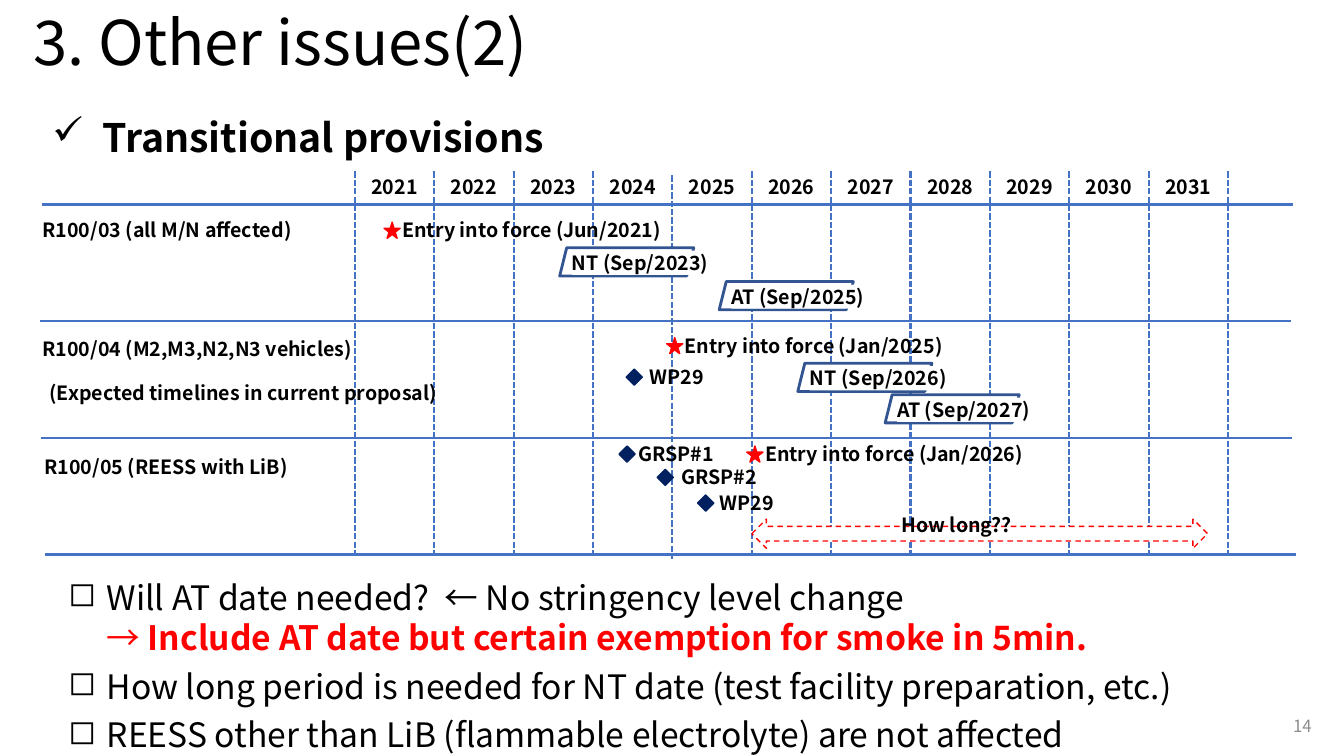
import lxml.etree
import pptx
import pptx.util
import pptx.dml.color
import pptx.enum.dml
import pptx.enum.shapes
import pptx.enum.text
import pptx.oxml.ns

Inches = pptx.util.Inches
Pt = pptx.util.Pt
RGBColor = pptx.dml.color.RGBColor
SHAPE = pptx.enum.shapes.MSO_SHAPE
DASH = pptx.enum.dml.MSO_LINE
ALIGN = pptx.enum.text.PP_ALIGN
ANCHOR = pptx.enum.text.MSO_ANCHOR
AUTO_SIZE = pptx.enum.text.MSO_AUTO_SIZE

FONT = "Noto Sans CJK JP"
COLORS = {
    "text": "000000",
    "grid": "4472C4",
    "tab": "325491",
    "force": "FF0000",
    "meeting": "002060",
    "white": "FFFFFF",
    "number": "8C8C8C",
}

# Timeline grid: one column a year, one row a regulation
FIRST_YEAR, LAST_YEAR = 2021, 2031
GRID_LEFT, GRID_TOP = 3.52, 2.03
HEADER_TOP, GRID_BOTTOM = 1.7, 5.51
COLUMN = (12.18 - GRID_LEFT) / (LAST_YEAR - FIRST_YEAR + 1)
ROW = (5.5 - GRID_TOP) / 3
LABEL_HEIGHT = 0.34
MARK = 0.16

presentation = pptx.Presentation()
presentation.slide_width = Inches(13.33)
presentation.slide_height = Inches(7.5)
slide = presentation.slides.add_slide(presentation.slide_layouts[5])


def write(shape, lines, size=14, bold=True, color="text", align=ALIGN.LEFT,
          side=0, edge=0.05, bullet=None, indent=0):
    """Fill a shape with paragraphs that share one format."""
    frame = shape.text_frame
    frame.text = "\n".join(lines)
    frame.word_wrap = True
    frame.auto_size = AUTO_SIZE.SHAPE_TO_FIT_TEXT
    frame.vertical_anchor = ANCHOR.TOP
    frame.margin_left = frame.margin_right = Inches(side)
    frame.margin_top = frame.margin_bottom = Inches(edge)
    for paragraph in frame.paragraphs:
        paragraph.alignment = align
        paragraph.space_after = Pt(6)
        for run in paragraph.runs:
            run.font.name = FONT
            run.font.size = Pt(size)
            run.font.bold = bold
            run.font.color.rgb = RGBColor.from_string(COLORS[color])
        if bullet:
            properties = paragraph._p.get_or_add_pPr()
            properties.set("marL", str(Inches(indent)))
            properties.set("indent", str(-Inches(indent)))
            mark = lxml.etree.SubElement(properties, pptx.oxml.ns.qn("a:buChar"))
            mark.set("char", bullet)


def add_mark(kind, left, top, width, height, fill, line=None, weight=1):
    shape = slide.shapes.add_shape(
        kind, Inches(left), Inches(top), Inches(width), Inches(height))
    shape.shadow.inherit = False
    shape.fill.solid()
    shape.fill.fore_color.rgb = RGBColor.from_string(COLORS[fill])
    if line:
        shape.line.color.rgb = RGBColor.from_string(COLORS[line])
        shape.line.width = Pt(weight)
    else:
        shape.line.fill.background()
    return shape


# Title and heading
title = slide.shapes.title
title.left, title.top = Inches(0.23), Inches(0)
title.width, title.height = Inches(12.88), Inches(0.91)
write(title, ["3. Other issues(2)"], size=44, bold=False, side=0.1)
title.text_frame.auto_size = AUTO_SIZE.NONE
title.text_frame.vertical_anchor = ANCHOR.MIDDLE
title.text_frame.paragraphs[0].line_spacing = 0.9
title.text_frame.paragraphs[0].space_after = Pt(0)

heading = slide.shapes.add_textbox(Inches(0.42), Inches(1.08), Inches(12.22), Inches(0.57))
write(heading, ["Transitional provisions"], size=28, side=0.1, bullet="✓", indent=0.5)

number = slide.shapes.add_textbox(Inches(10.11), Inches(7), Inches(3), Inches(0.4))
write(number, ["14"], size=12, bold=False, color="number", align=ALIGN.RIGHT, side=0.1)
number.text_frame.auto_size = AUTO_SIZE.NONE
number.text_frame.vertical_anchor = ANCHOR.MIDDLE
number.text_frame.paragraphs[0].space_after = Pt(0)

# Grid lines: x1, y1, x2, y2, weight, dash
grid_lines = []
for year in range(FIRST_YEAR, LAST_YEAR + 2):
    x = GRID_LEFT + (year - FIRST_YEAR) * COLUMN
    drop = 0.04 if year == 2025 else 0
    grid_lines.append((x, HEADER_TOP + drop, x, GRID_BOTTOM + drop, 1.5, DASH.SQUARE_DOT))
for row, (left, weight) in enumerate([(0.42, 2.25), (0.4, 1.5), (0.41, 1.5), (0.45, 2.25)]):
    y = GRID_TOP + row * ROW
    grid_lines.append((left, y, left + 12.4, y, weight, None))

for x1, y1, x2, y2, weight, dash in grid_lines:
    line = slide.shapes.add_connector(
        pptx.enum.shapes.MSO_CONNECTOR.STRAIGHT,
        Inches(x1), Inches(y1), Inches(x2), Inches(y2))
    line.line.color.rgb = RGBColor.from_string(COLORS["grid"])
    line.line.width = Pt(weight)
    if dash:
        line.line.dash_style = dash
    lxml.etree.SubElement(line._element.spPr, pptx.oxml.ns.qn("a:effectLst"))

# Labels: text, left, centre in rows, width, alignment
labels = [
    ("R100/03 (all M/N affected)", 0.42, 0.22, 3.1, ALIGN.LEFT),
    ("R100/04 (M2,M3,N2,N3 vehicles)", 0.42, 1.24, 3.57, ALIGN.LEFT),
    ("(Expected timelines in current proposal)", 0.49, 1.62, 4.42, ALIGN.LEFT),
    ("R100/05 (REESS with LiB)", 0.44, 2.25, 3.57, ALIGN.LEFT),
]
for year in range(FIRST_YEAR, LAST_YEAR + 1):
    x = GRID_LEFT + (year - FIRST_YEAR) * COLUMN
    labels.append((str(year), x, -0.15, COLUMN, ALIGN.CENTER))

# Tabs: text, date, top in rows
tabs = [
    ("AT (Sep/2025)", 2025.59, 0.66),
    ("NT (Sep/2023)", 2023.58, 0.37),
    ("AT (Sep/2027)", 2027.68, 1.63),
    ("NT (Sep/2026)", 2026.58, 1.36),
]
for text, date, row in tabs:
    x = GRID_LEFT + (date - FIRST_YEAR) * COLUMN
    y = GRID_TOP + row * ROW
    add_mark(SHAPE.PARALLELOGRAM, x, y, 1.33, 0.28, "white", "tab", 2)
    cover = add_mark(SHAPE.RECTANGLE, x + 0.12, y + 0.03, 1.67, 0.24, "white")
    write(cover, [text], edge=0)

# Events: text, date, centre in rows, gap to the label, mark, colour
events = [
    ("Entry into force (Jun/2021)", 2021.47, 0.22, 0.1, SHAPE.STAR_5_POINT, "force"),
    ("Entry into force (Jan/2025)", 2025.03, 1.21, 0.1, SHAPE.STAR_5_POINT, "force"),
    ("Entry into force (Jan/2026)", 2026.04, 2.14, 0.1, SHAPE.STAR_5_POINT, "force"),
    ("WP29", 2024.52, 1.48, 0.15, SHAPE.DIAMOND, "meeting"),
    ("GRSP#1", 2024.43, 2.14, 0.11, SHAPE.DIAMOND, "meeting"),
    ("GRSP#2", 2024.91, 2.34, 0.16, SHAPE.DIAMOND, "meeting"),
    ("WP29", 2025.42, 2.56, 0.14, SHAPE.DIAMOND, "meeting"),
]
for text, date, row, gap, kind, color in events:
    x = GRID_LEFT + (date - FIRST_YEAR) * COLUMN
    y = GRID_TOP + row * ROW
    add_mark(kind, x - MARK / 2, y - MARK / 2, MARK, MARK, color, color)
    width = 3.1 if color == "force" else 0.93
    labels.append((text, x + gap, row, width, ALIGN.LEFT))

period = add_mark(SHAPE.LEFT_RIGHT_ARROW, GRID_LEFT + 5 * COLUMN, 5.15, 4.52, 0.29,
                  "white", "force")
period.line.dash_style = DASH.DASH
labels.append(("How long??", 8.94, 2.75, 1.25, ALIGN.LEFT))

for text, left, row, width, align in labels:
    top = GRID_TOP + row * ROW - LABEL_HEIGHT / 2
    label = slide.shapes.add_textbox(
        Inches(left), Inches(top), Inches(width), Inches(LABEL_HEIGHT))
    write(label, [text], align=align)

# Open questions
questions = slide.shapes.add_textbox(Inches(0.58), Inches(5.67), Inches(12.05), Inches(1.88))
write(questions, [
    "Will AT date needed?  ← No stringency level change \v",
    "How long period is needed for NT date (test facility preparation, etc.)",
    "REESS other than LiB (flammable electrolyte) are not affected",
], size=24, bold=False, side=0.1, bullet="◻", indent=0.38)
answers = [("→ ", False), ("Include AT date but certain exemption for smoke in 5min.", True)]
for text, bold in answers:
    run = questions.text_frame.paragraphs[0].add_run()
    run.text = text
    run.font.name = FONT
    run.font.size = Pt(24)
    run.font.bold = bold
    run.font.color.rgb = RGBColor.from_string(COLORS["force"])

presentation.save("out.pptx")
